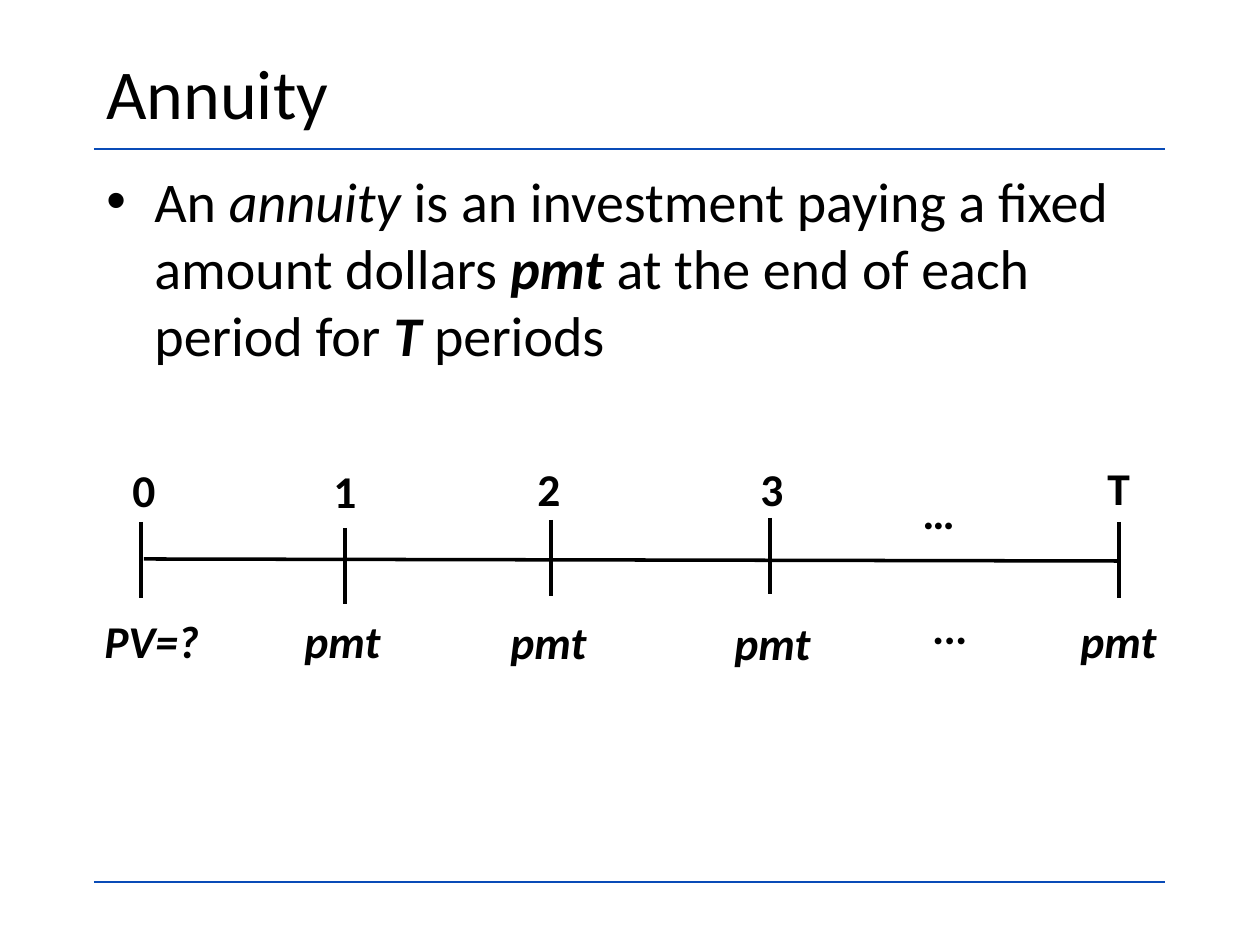
import pptx
import pptx.util
import pptx.dml.color
import pptx.enum.shapes
import pptx.enum.text
import pptx.oxml.ns
import lxml.etree

PX = 914400 / 126
COLORS = {"rule": "094BB7", "ink": "000000"}
FONT = "Calibri"

TITLE = "Annuity"
# text, bold, italic
DEFINITION = [
    ("An ", False, False),
    ("annuity", False, True),
    (" is an investment paying a fixed amount dollars ", False, False),
    ("pmt ", True, True),
    ("at the end of each period for ", False, False),
    ("T", True, True),
    (" periods", False, False),
]
RULES_Y = [149, 882]
MARGIN, CONTENT_WIDTH = 94, 1071

TICK_HEIGHT = 76
TICKS = [(141, 522), (345, 528), (551, 520), (770, 518), (1119, 522)]
AXIS = (144, 559, 1118, 561)

LABEL_HEIGHT = 68
# text, left, top, width
PERIODS = [
    ("0", 120, 456, 48),
    ("1", 321, 457, 48),
    ("2", 525, 455, 48),
    ("3", 748, 455, 48),
    ("…", 910, 478, 58),
    ("T", 1095, 454, 48),
]
PAYMENTS = [
    ("PV=?", 92, 607, 121),
    ("pmt", 292, 607, 102),
    ("pmt", 498, 608, 102),
    ("pmt", 722, 609, 102),
    ("…", 922, 593, 58),
    ("pmt", 1068, 607, 102),
]


def px(length):
    return pptx.util.Emu(round(length * PX))


def rgb(name):
    return pptx.dml.color.RGBColor.from_string(COLORS[name])


def add_line(slide, ends, color, weight):
    line = slide.shapes.add_connector(
        pptx.enum.shapes.MSO_CONNECTOR.STRAIGHT, *map(px, ends))
    line.line.color.rgb = rgb(color)
    line.line.width = pptx.util.Pt(weight)
    lxml.etree.SubElement(line._element.spPr, pptx.oxml.ns.qn("a:effectLst"))


def add_text(slide, box, runs, size, wrap=True):
    """Add a text box from (text, bold, italic) runs and return its frame."""
    frame = slide.shapes.add_textbox(*map(px, box)).text_frame
    frame.word_wrap = wrap
    for text, bold, italic in runs:
        run = frame.paragraphs[0].add_run()
        run.text = text
        run.font.name = FONT
        run.font.size = pptx.util.Pt(size)
        run.font.bold = bold
        run.font.italic = italic
        run.font.color.rgb = rgb("ink")
    return frame


def add_bullet(paragraph, indent):
    properties = paragraph._p.get_or_add_pPr()
    properties.set("marL", str(px(indent)))
    properties.set("indent", str(-px(indent)))
    bullet_font = lxml.etree.SubElement(properties, pptx.oxml.ns.qn("a:buFont"))
    bullet_font.set("typeface", "Arial")
    bullet = lxml.etree.SubElement(properties, pptx.oxml.ns.qn("a:buChar"))
    bullet.set("char", "•")


def add_labels(slide, labels, italic):
    for text, left, top, width in labels:
        frame = add_text(slide, (left, top, width, LABEL_HEIGHT),
                         [(text, True, italic)], 26, wrap=False)
        frame.auto_size = pptx.enum.text.MSO_AUTO_SIZE.SHAPE_TO_FIT_TEXT


def main():
    deck = pptx.Presentation()
    deck.slide_width, deck.slide_height = px(1260), px(945)
    slide = deck.slides.add_slide(deck.slide_layouts[6])

    for y in RULES_Y:
        add_line(slide, (MARGIN, y, MARGIN + CONTENT_WIDTH, y), "rule", 1.5)

    title = add_text(slide, (MARGIN, 37, CONTENT_WIDTH, 108),
                     [(TITLE, False, False)], 40)
    title.vertical_anchor = pptx.enum.text.MSO_ANCHOR.MIDDLE
    definition = add_text(slide, (MARGIN, 160, CONTENT_WIDTH, 707), DEFINITION, 32)
    add_bullet(definition.paragraphs[0], 48)

    add_line(slide, AXIS, "ink", 2)
    for x, top in TICKS:
        add_line(slide, (x, top, x, top + TICK_HEIGHT), "ink", 2)
    add_labels(slide, PERIODS, italic=False)
    add_labels(slide, PAYMENTS, italic=True)

    deck.save("out.pptx")


if __name__ == "__main__":
    main()
